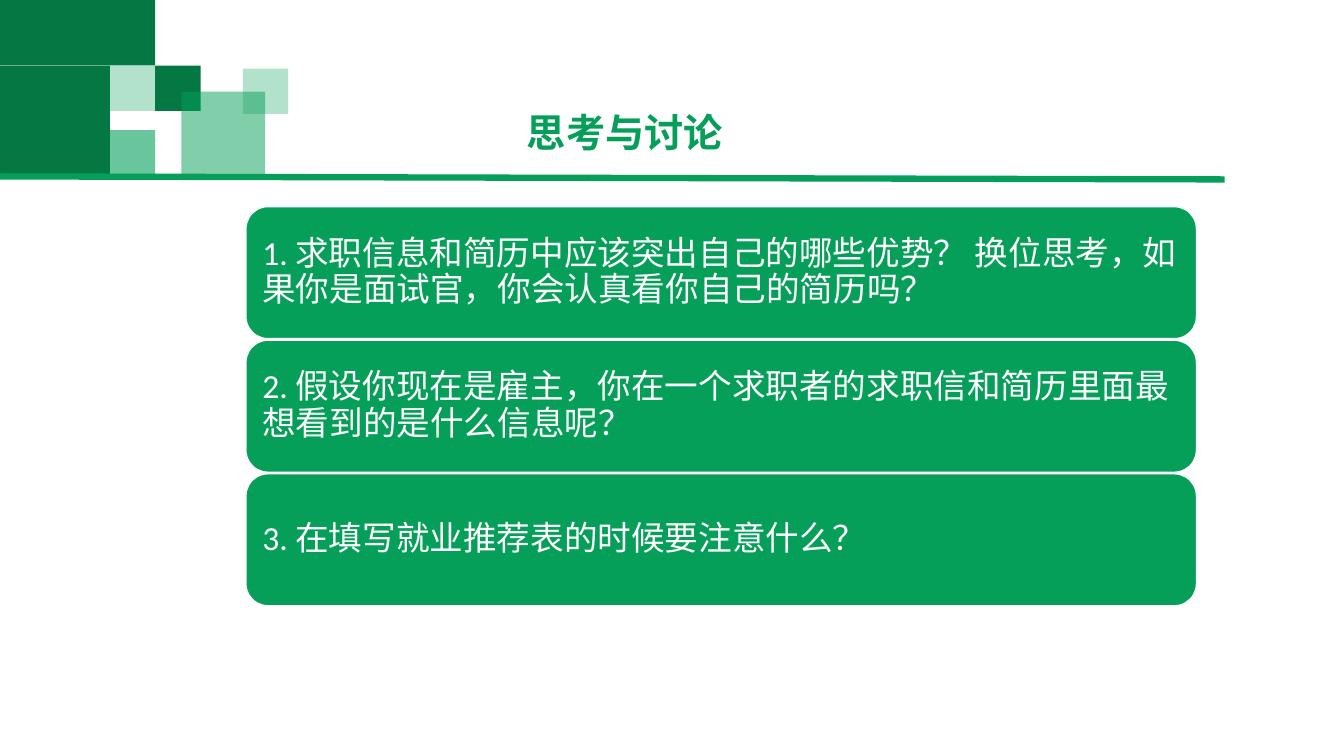
from dataclasses import dataclass

import lxml.etree
import pptx
import pptx.dml.color
import pptx.enum.shapes
import pptx.enum.text
import pptx.oxml.ns
import pptx.shapes.autoshape
import pptx.slide
import pptx.text.text
import pptx.util

GREEN = pptx.dml.color.RGBColor(0x05, 0x9F, 0x59)
DARK_GREEN = pptx.dml.color.RGBColor(0x04, 0x77, 0x43)
WHITE = pptx.dml.color.RGBColor(0xFF, 0xFF, 0xFF)
FONT = "Calibri"


@dataclass(frozen=True)
class Block:
    left: float
    top: float
    width: float
    height: float
    color: pptx.dml.color.RGBColor = GREEN
    opacity: int = 100


SMALL = 32.4
BLOCKS = (
    Block(0, 46.8, 78.48, 78.48, DARK_GREEN),
    Block(0, 0, 110.88, 46.8, DARK_GREEN),
    Block(78.48, 46.8, SMALL, SMALL, opacity=30),
    Block(110.88, 46.8, SMALL, SMALL, DARK_GREEN),
    Block(78.48, 92.88, SMALL, SMALL, opacity=60),
    Block(129.6, 65.52, 59.76, 59.76, opacity=50),
    Block(173.52, 48.96, SMALL, SMALL, opacity=30),
)
QUESTIONS = (
    "1. 求职信息和简历中应该突出自己的哪些优势？ 换位思考，如果你是面试官，你会认真看你自己的简历吗？",
    "2. 假设你现在是雇主，你在一个求职者的求职信和简历里面最想看到的是什么信息呢？",
    "3. 在填写就业推荐表的时候要注意什么？",
)
CARD_TOP = 147.6
CARD_PITCH = 95.4


def write_text(
    frame: pptx.text.text.TextFrame,
    text: str,
    *,
    size: float,
    color: pptx.dml.color.RGBColor,
    bold: bool = False,
    space_before: float = 0,
) -> None:
    frame.word_wrap = True
    paragraph = frame.paragraphs[0]
    paragraph.alignment = pptx.enum.text.PP_ALIGN.LEFT
    paragraph.line_spacing = 0.9
    paragraph.space_before = pptx.util.Pt(space_before)
    run = paragraph.add_run()
    run.text = text
    run.font.name = FONT
    run.font.size = pptx.util.Pt(size)
    run.font.bold = bold
    run.font.color.rgb = color


def add_block(
    slide: pptx.slide.Slide,
    block: Block,
    kind: pptx.enum.shapes.MSO_SHAPE = pptx.enum.shapes.MSO_SHAPE.RECTANGLE,
) -> pptx.shapes.autoshape.Shape:
    shape = slide.shapes.add_shape(
        kind,
        pptx.util.Pt(block.left),
        pptx.util.Pt(block.top),
        pptx.util.Pt(block.width),
        pptx.util.Pt(block.height),
    )
    shape.shadow.inherit = False
    shape.fill.solid()
    shape.fill.fore_color.rgb = block.color
    shape.line.fill.background()
    if block.opacity < 100:
        color = shape.element.spPr.find(".//" + pptx.oxml.ns.qn("a:srgbClr"))
        alpha = lxml.etree.SubElement(color, pptx.oxml.ns.qn("a:alpha"))
        alpha.set("val", str(block.opacity * 1000))
    return shape


def add_title(slide: pptx.slide.Slide) -> None:
    title = slide.shapes.add_textbox(
        pptx.util.Pt(369.36), pptx.util.Pt(77.76), pptx.util.Pt(311.76), pptx.util.Pt(37.44)
    )
    title.text_frame.auto_size = pptx.enum.text.MSO_AUTO_SIZE.SHAPE_TO_FIT_TEXT
    write_text(
        title.text_frame, "思考与讨论", size=28, color=GREEN, bold=True, space_before=10
    )


def add_rule(slide: pptx.slide.Slide) -> None:
    rule = slide.shapes.add_connector(
        pptx.enum.shapes.MSO_CONNECTOR.STRAIGHT,
        pptx.util.Pt(0),
        pptx.util.Pt(126),
        pptx.util.Pt(874.8),
        pptx.util.Pt(128.16),
    )
    rule.line.color.rgb = GREEN
    rule.line.width = pptx.util.Pt(4.5)
    lxml.etree.SubElement(rule.element.spPr, pptx.oxml.ns.qn("a:effectLst"))


def add_card(slide: pptx.slide.Slide, top: float, question: str) -> None:
    card = add_block(
        slide,
        Block(175.68, top, 678.96, 94.32),
        pptx.enum.shapes.MSO_SHAPE.ROUNDED_RECTANGLE,
    )
    card.line.color.rgb = WHITE
    card.line.width = pptx.util.Pt(1)
    frame = card.text_frame
    frame.vertical_anchor = pptx.enum.text.MSO_ANCHOR.MIDDLE
    frame.margin_left = frame.margin_right = pptx.util.Pt(7.2)
    frame.margin_top = frame.margin_bottom = pptx.util.Pt(7.2)
    write_text(frame, question, size=24, color=WHITE)


def main() -> None:
    presentation = pptx.Presentation()
    presentation.slide_width = pptx.util.Pt(960)
    presentation.slide_height = pptx.util.Pt(540)
    slide = presentation.slides.add_slide(presentation.slide_layouts[6])
    for block in BLOCKS:
        add_block(slide, block)
    add_title(slide)
    add_rule(slide)
    for index, question in enumerate(QUESTIONS):
        add_card(slide, CARD_TOP + index * CARD_PITCH, question)
    presentation.save("out.pptx")


if __name__ == "__main__":
    main()
